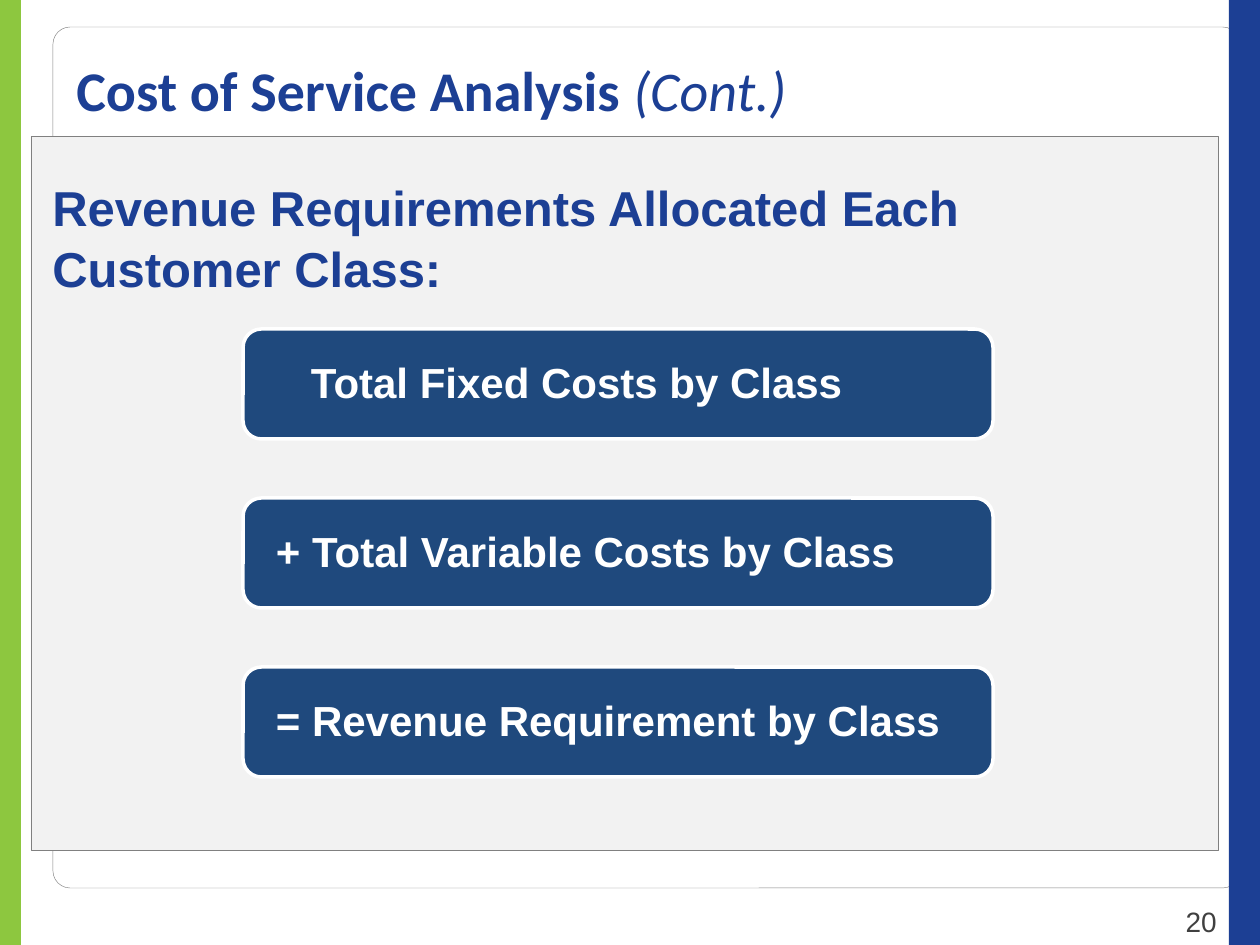
from dataclasses import dataclass

import pptx
import pptx.dml.color
import pptx.enum.shapes
import pptx.enum.text
import pptx.util

RGBColor = pptx.dml.color.RGBColor
Shape = pptx.enum.shapes.MSO_SHAPE
Align = pptx.enum.text.PP_ALIGN
Anchor = pptx.enum.text.MSO_ANCHOR

EMU_PER_PX = 914400 / 126

WHITE = RGBColor(0xFF, 0xFF, 0xFF)
PANEL_GREY = RGBColor(0xF2, 0xF2, 0xF2)
LINE_GREY = RGBColor(0x80, 0x80, 0x80)
NUMBER_GREY = RGBColor(0x40, 0x40, 0x40)
GREEN = RGBColor(0x8D, 0xC7, 0x3F)
BLUE = RGBColor(0x1C, 0x3F, 0x94)
NAVY = RGBColor(0x1F, 0x49, 0x7D)


@dataclass(frozen=True)
class Area:
    left: int
    top: int
    width: int
    height: int

    def emu(self) -> list[int]:
        return [px(n) for n in (self.left, self.top, self.width, self.height)]


@dataclass(frozen=True)
class Step:
    text: str
    inset: int = 28


STEPS = [
    Step("Total Fixed Costs by Class", inset=63),
    Step("+ Total Variable Costs by Class"),
    Step("= Revenue Requirement by Class"),
]
STEP_TOP = 329
STEP_PITCH = 169


def px(length: int) -> int:
    return pptx.util.Emu(round(length * EMU_PER_PX))


def add_block(page, kind, area: Area, fill=None, line=None, line_width=0.25, corner=None):
    block = page.shapes.add_shape(kind, *area.emu())
    block.shadow.inherit = False
    if corner is not None:
        block.adjustments[0] = corner
    if fill is None:
        block.fill.background()
    else:
        block.fill.solid()
        block.fill.fore_color.rgb = fill
    if line is None:
        block.line.fill.background()
    else:
        block.line.color.rgb = line
        block.line.width = pptx.util.Pt(line_width)


def add_span(para, text: str, size: int, color, font="Arial", bold=False, italic=False):
    span = para.add_run()
    span.text = text
    span.font.name = font
    span.font.size = pptx.util.Pt(size)
    span.font.color.rgb = color
    span.font.bold = bold
    span.font.italic = italic


def add_text(page, area: Area, text: str, *, align=Align.LEFT, anchor=Anchor.TOP,
             insets=None, spacing=None, **span_format):
    """Add a one-paragraph text box; insets are left, top, right, bottom."""
    box = page.shapes.add_textbox(*area.emu())
    frame = box.text_frame
    frame.word_wrap = True
    frame.vertical_anchor = anchor
    if insets:
        (frame.margin_left, frame.margin_top,
         frame.margin_right, frame.margin_bottom) = map(px, insets)
    para = frame.paragraphs[0]
    para.alignment = align
    if spacing:
        para.line_spacing = spacing
    add_span(para, text, **span_format)
    return para


def add_step(page, step: Step, top: int):
    add_block(page, Shape.ROUNDED_RECTANGLE, Area(243, top, 750, 110),
              fill=NAVY, line=WHITE, line_width=2)
    add_text(page, Area(248, top + 6, 738, 99), step.text, anchor=Anchor.MIDDLE,
             insets=(step.inset, 0, 28, 0), spacing=0.9, size=24, color=WHITE, bold=True)


def main():
    deck = pptx.Presentation()
    deck.slide_width, deck.slide_height = px(1260), px(945)
    page = deck.slides.add_slide(deck.slide_layouts[6])

    add_block(page, Shape.ROUNDED_RECTANGLE, Area(53, 27, 1187, 861),
              line=LINE_GREY, corner=0.02)
    add_block(page, Shape.RECTANGLE, Area(31, 136, 1187, 714),
              fill=PANEL_GREY, line=LINE_GREY)
    add_block(page, Shape.RECTANGLE, Area(0, 0, 21, 945), fill=GREEN)
    add_block(page, Shape.RECTANGLE, Area(1229, 0, 31, 945), fill=BLUE)

    add_text(page, Area(1166, 898, 63, 47), "20", align=Align.RIGHT,
             size=16, color=NUMBER_GREY)
    add_text(page, Area(40, 168, 1155, 131),
             "Revenue Requirements Allocated Each Customer Class:",
             spacing=1.05, size=28, color=BLUE, bold=True)
    for index, step in enumerate(STEPS):
        add_step(page, step, STEP_TOP + index * STEP_PITCH)

    title = add_text(page, Area(64, 49, 1162, 95), "Cost of Service Analysis ",
                     size=32, color=BLUE, font="Calibri", bold=True)
    add_span(title, "(Cont.)", size=32, color=BLUE, font="Calibri", italic=True)

    deck.save("out.pptx")


if __name__ == "__main__":
    main()
